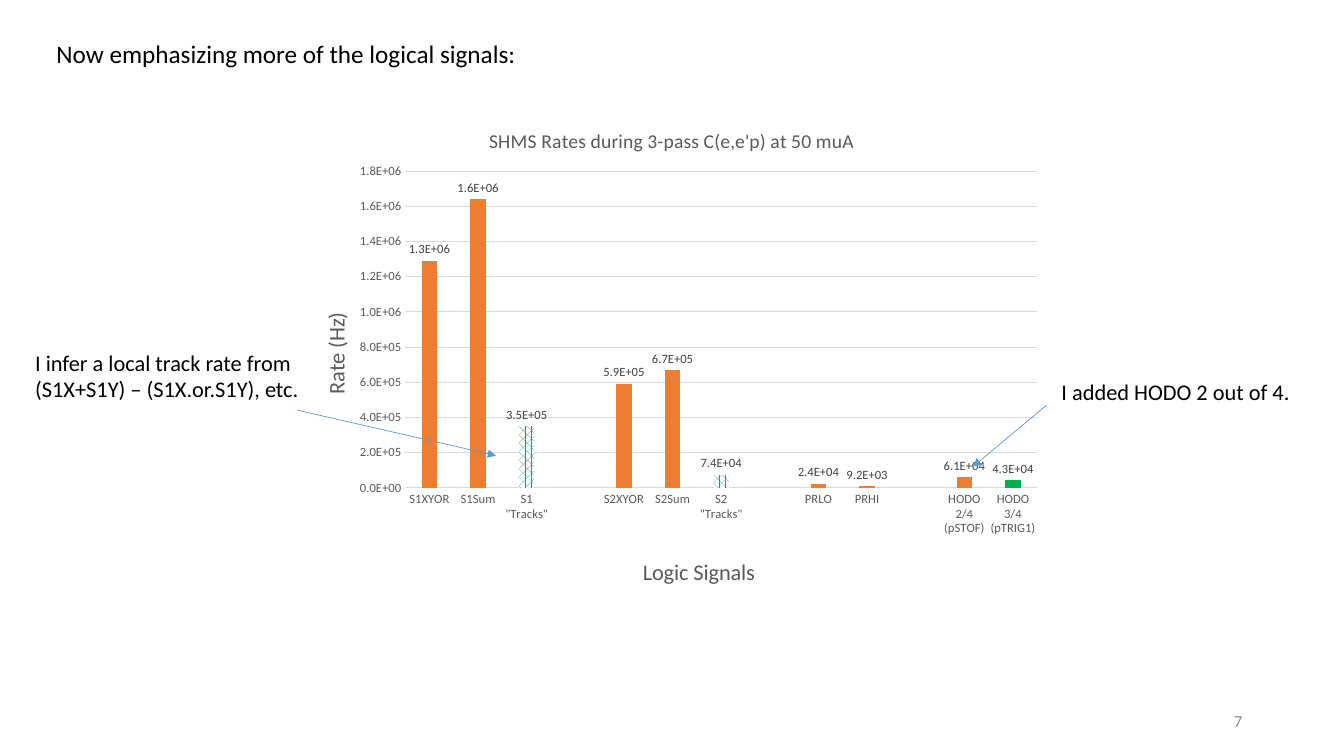
from lxml.etree import SubElement
from pptx import Presentation
from pptx.chart.data import CategoryChartData
from pptx.dml.color import RGBColor
from pptx.enum.chart import XL_CHART_TYPE, XL_LABEL_POSITION, XL_TICK_MARK
from pptx.enum.dml import MSO_PATTERN
from pptx.enum.shapes import MSO_CONNECTOR
from pptx.enum.text import MSO_ANCHOR, PP_ALIGN
from pptx.oxml import parse_xml
from pptx.oxml.ns import nsdecls, qn
from pptx.util import Pt

PX = 9144
FONT = "Calibri"
BLACK = RGBColor(0x00, 0x00, 0x00)
WHITE = RGBColor(0xFF, 0xFF, 0xFF)
ORANGE = RGBColor(0xED, 0x7D, 0x31)
GREEN = RGBColor(0x00, 0xB0, 0x50)
BLUE = RGBColor(0x5B, 0x9B, 0xD5)
DARK = RGBColor(0x40, 0x40, 0x40)
GRAY = RGBColor(0x59, 0x59, 0x59)
PAGE_GRAY = RGBColor(0x8C, 0x8C, 0x8C)
GRID = RGBColor(0xD9, 0xD9, 0xD9)

RATES = [
    ("S1XYOR", 1290000), ("S1Sum", 1640000), ('S1 "Tracks"', 350000), ("", None),
    ("S2XYOR", 593000), ("S2Sum", 667000), ('S2 "Tracks"', 74000), ("", None),
    ("PRLO", 24400), ("PRHI", 9220), ("", None),
    ("HODO 2/4 (pSTOF)", 60700), ("HODO 3/4 (pTRIG1)", 42600),
]


def emu(*lengths):
    return [n * PX for n in lengths]


def set_font(font, size, color):
    font.name, font.size, font.bold = FONT, Pt(size), False
    font.color.rgb = color


def write(tf, *lines, size=16, color=BLACK, align=PP_ALIGN.LEFT, anchor=None):
    if anchor is not None:
        tf.vertical_anchor = anchor
        tf.word_wrap = True
    for i, line in enumerate(lines):
        p = tf.add_paragraph() if i else tf.paragraphs[0]
        p.alignment = align
        r = p.add_run()
        r.text = line
        set_font(r.font, size, color)


def add_text(s, box, *lines, anchor=MSO_ANCHOR.TOP, **fmt):
    sp = s.shapes.add_textbox(*emu(*box))
    write(sp.text_frame, *lines, anchor=anchor, **fmt)


def add_title(s, box, text):
    sp = s.shapes.title
    sp.left, sp.top, sp.width, sp.height = emu(*box)
    write(sp.text_frame, text, size=18, anchor=MSO_ANCHOR.TOP)


def add_arrow(s, *ends):
    cn = s.shapes.add_connector(MSO_CONNECTOR.STRAIGHT, *emu(*ends))
    cn.line.color.rgb = BLUE
    cn.line.width = Pt(0.5)
    cn.line._get_or_add_ln().append(parse_xml(f'<a:tailEnd {nsdecls("a")} type="triangle"/>'))
    cn._element.spPr.append(parse_xml(f'<a:effectLst {nsdecls("a")}/>'))


def place(element, index, **fractions):
    layout = element.find(qn("c:layout"))
    if layout is None:
        layout = element.makeelement(qn("c:layout"))
        element.insert(index, layout)
    manual = SubElement(layout, qn("c:manualLayout"))
    if "w" in fractions:
        SubElement(manual, qn("c:layoutTarget")).set("val", "inner")
    for key in ("x", "y"):
        SubElement(manual, qn(f"c:{key}Mode")).set("val", "edge")
    for key, value in fractions.items():
        SubElement(manual, qn(f"c:{key}")).set("val", str(value))


def add_chart_title(title, text, size, x, y):
    write(title.text_frame, text, size=size, color=GRAY, align=PP_ALIGN.CENTER)
    place(title._element, 1, x=x, y=y)


def format_axis(axis, text, x, y):
    axis.major_tick_mark = axis.minor_tick_mark = XL_TICK_MARK.NONE
    set_font(axis.tick_labels.font, 9, GRAY)
    add_chart_title(axis.axis_title, text, 16, x, y)


def format_bars(plot):
    plot.gap_width, plot.overlap, plot.vary_by_categories = 219, -27, False
    bars = plot.series[0]
    bars.format.fill.solid()
    bars.format.fill.fore_color.rgb = ORANGE
    for i, (name, _) in enumerate(RATES):
        if "Tracks" in name:
            fill = bars.points[i].format.fill
            fill.patterned()
            fill.pattern = MSO_PATTERN.PERCENT_60
            fill.fore_color.rgb = GREEN
            fill.back_color.rgb = WHITE
        elif "pTRIG1" in name:
            fill = bars.points[i].format.fill
            fill.solid()
            fill.fore_color.rgb = GREEN
    labels = bars.data_labels
    labels.show_value = True
    labels.position = XL_LABEL_POSITION.OUTSIDE_END
    labels.number_format, labels.number_format_is_linked = "0.0E+00", False
    set_font(labels.font, 9, DARK)


def add_rate_chart(s, box):
    data = CategoryChartData()
    data.categories = [name for name, _ in RATES]
    data.add_series("Series 1", [rate for _, rate in RATES])
    chart = s.shapes.add_chart(XL_CHART_TYPE.COLUMN_CLUSTERED, *emu(*box), data).chart
    set_font(chart.font, 10, BLACK)
    chart.has_legend = False
    add_chart_title(chart.chart_title, "SHMS Rates during 3-pass C(e,e'p) at 50 muA", 14, 0.26, 0.04)
    place(chart._chartSpace.chart.plotArea, 0, x=0.155, y=0.135, w=0.825, h=0.635)

    cat, val = chart.category_axis, chart.value_axis
    format_axis(cat, "Logic Signals", 0.46, 0.9)
    format_axis(val, "Rate (Hz)", 0.04, 0.41)
    val.minimum_scale, val.maximum_scale, val.major_unit = 0, 1800000, 200000
    val.tick_labels.number_format = "0.0E+00"
    val.tick_labels.number_format_is_linked = False
    val.format.line.fill.background()
    for line in (cat.format.line, val.major_gridlines.format.line):
        line.color.rgb = GRID
        line.width = Pt(0.75)
    format_bars(chart.plots[0])


def add_note(s, box, lines, tip, start):
    x, y, w, h = box
    add_text(s, box, *lines)
    add_arrow(s, x + start[0], y + start[1], *tip)


def main():
    prs = Presentation()
    prs.slide_width, prs.slide_height = emu(1333, 750)
    s = prs.slides.add_slide(prs.slide_layouts[5])
    add_title(s, (46, 33, 710, 40), "Now emphasizing more of the logical signals:")
    add_rate_chart(s, (284, 103, 760, 495))
    add_note(s, (25, 341, 282, 91),
             ["I infer a local track rate from", "(S1X+S1Y) – (S1X.or.S1Y), etc."],
             tip=(492, 452), start=(270, 66))
    add_note(s, (1043, 370, 277, 37), ["I added HODO 2 out of 4."],
             tip=(965, 463), start=(-5, 32))
    add_text(s, (942, 695, 300, 40), "7", size=12, color=PAGE_GRAY,
             align=PP_ALIGN.RIGHT, anchor=MSO_ANCHOR.MIDDLE)
    prs.save("out.pptx")


if __name__ == "__main__":
    main()
